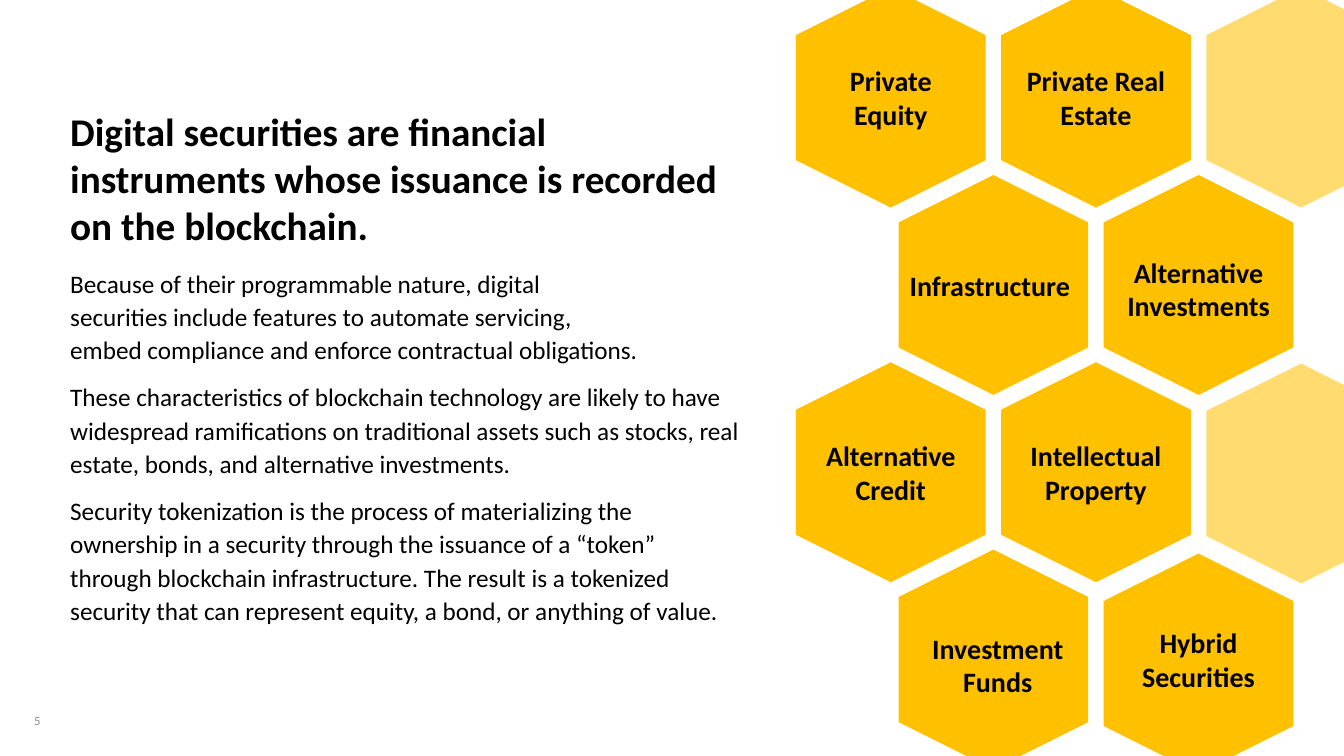
from lxml import etree
from pptx import Presentation
from pptx.dml.color import RGBColor
from pptx.enum.shapes import MSO_SHAPE
from pptx.enum.text import MSO_ANCHOR, PP_ALIGN
from pptx.oxml.ns import qn
from pptx.util import Cm, Pt

HEXAGON = MSO_SHAPE.HEXAGON
TOP, MIDDLE = MSO_ANCHOR.TOP, MSO_ANCHOR.MIDDLE
LEFT, CENTER = PP_ALIGN.LEFT, PP_ALIGN.CENTER
AMBER = RGBColor(0xFF, 0xC0, 0x00)
BLACK = RGBColor(0x00, 0x00, 0x00)
GRAY = RGBColor(0x8C, 0x8C, 0x8C)
FONT = "Calibri"

# Content
HEADLINE = ("Digital securities are financial instruments whose issuance "
            "is recorded on the blockchain.")
BODY = [
    "Because of their programmable nature, digital\v"
    "securities include features to automate servicing,\v"
    "embed compliance and enforce contractual obligations.",
    "These characteristics of blockchain technology are likely to have "
    "widespread ramifications on traditional assets such as stocks, real "
    "estate, bonds, and alternative investments.",
    "Security tokenization is the process of materializing the ownership in "
    "a security through the issuance of a “token” through blockchain "
    "infrastructure. The result is a tokenized security that can represent "
    "equity, a bond, or anything of value.",
]
PAGE_NUMBER = "5"
# Rows of (label lines, label shift x, label shift y, cell shift y) in cm;
# a cell without label lines is pale
HONEYCOMB = [
    [(["Private Equity"], 0, 0, 0), (["Private Real Estate"], 0, 0, 0), ([], 0, 0, 0)],
    [(["Infrastructure"], -0.09, 0, 0), (["Alternative Investments"], 0, 0.1, 0)],
    [(["Alternative", "Credit"], 0, 0, 0), (["Intellectual", "Property"], 0, 0, 0),
     ([], 0, 0, 0.03)],
    [(["Investment Funds"], 0.11, 0.13, 0), (["Hybrid Securities"], 0, 0, 0.1)],
]

# Honeycomb geometry in cm
FIRST_X, FIRST_Y = 22.45, 2.46
COLUMN_STEP, ROW_STEP = 5.17, 4.72
CELL_LENGTH, CELL_WIDTH = 5.54, 4.78
LABEL_WIDTH, WIDE_LABEL_WIDTH, LABEL_HEIGHT = 4.19, 4.6, 1.96
PALE_ALPHA = 56


def add_text(slide, box, lines, size, bold=False, color=BLACK, align=LEFT, anchor=TOP):
    frame = slide.shapes.add_textbox(*map(Cm, box)).text_frame
    frame.word_wrap = True
    frame.vertical_anchor = anchor
    frame.text = "\n".join(lines)
    for paragraph in frame.paragraphs:
        paragraph.alignment = align
        for run in paragraph.runs:
            run.font.name = FONT
            run.font.size = Pt(size)
            run.font.bold = bold
            run.font.color.rgb = color
    return frame


def add_cell(slide, x, y, pale):
    cell = slide.shapes.add_shape(HEXAGON, Cm(x - CELL_LENGTH / 2), Cm(y - CELL_WIDTH / 2),
                                  Cm(CELL_LENGTH), Cm(CELL_WIDTH))
    cell.rotation = 270
    cell.shadow.inherit = False
    cell.fill.solid()
    cell.fill.fore_color.rgb = AMBER
    cell.line.fill.background()
    if pale:
        color = cell.fill._xPr.find(qn("a:solidFill"))[0]
        etree.SubElement(color, qn("a:alpha")).set("val", str(PALE_ALPHA * 1000))


presentation = Presentation()
presentation.slide_width, presentation.slide_height = Cm(33.87), Cm(19.05)
slide = presentation.slides.add_slide(presentation.slide_layouts[6])

# Headline and body text
frame = add_text(slide, (1.52, 2.57, 17.45, 13.41), [HEADLINE, *BODY], 18)
headline, *body = frame.paragraphs
headline.space_after = Pt(12)
headline.runs[0].font.size = Pt(28)
headline.runs[0].font.bold = True
for paragraph in body:
    paragraph.line_spacing = 1.1
    paragraph.space_after = Pt(10)

# Honeycomb: odd rows shift by half a column
for row, cells in enumerate(HONEYCOMB):
    for column, (label, label_dx, label_dy, cell_dy) in enumerate(cells):
        x = FIRST_X + COLUMN_STEP * (column + row % 2 / 2)
        y = FIRST_Y + ROW_STEP * row
        add_cell(slide, x, y + cell_dy, pale=not label)
        if label:
            width = WIDE_LABEL_WIDTH if label == ["Infrastructure"] else LABEL_WIDTH
            box = (x + label_dx - width / 2, y + label_dy - LABEL_HEIGHT / 2,
                   width, LABEL_HEIGHT)
            add_text(slide, box, label, 20, bold=True, align=CENTER, anchor=MIDDLE)

# Page number
add_text(slide, (0.61, 17.65, 7.62, 1.02), [PAGE_NUMBER], 9, color=GRAY, anchor=MIDDLE)

presentation.save("out.pptx")
